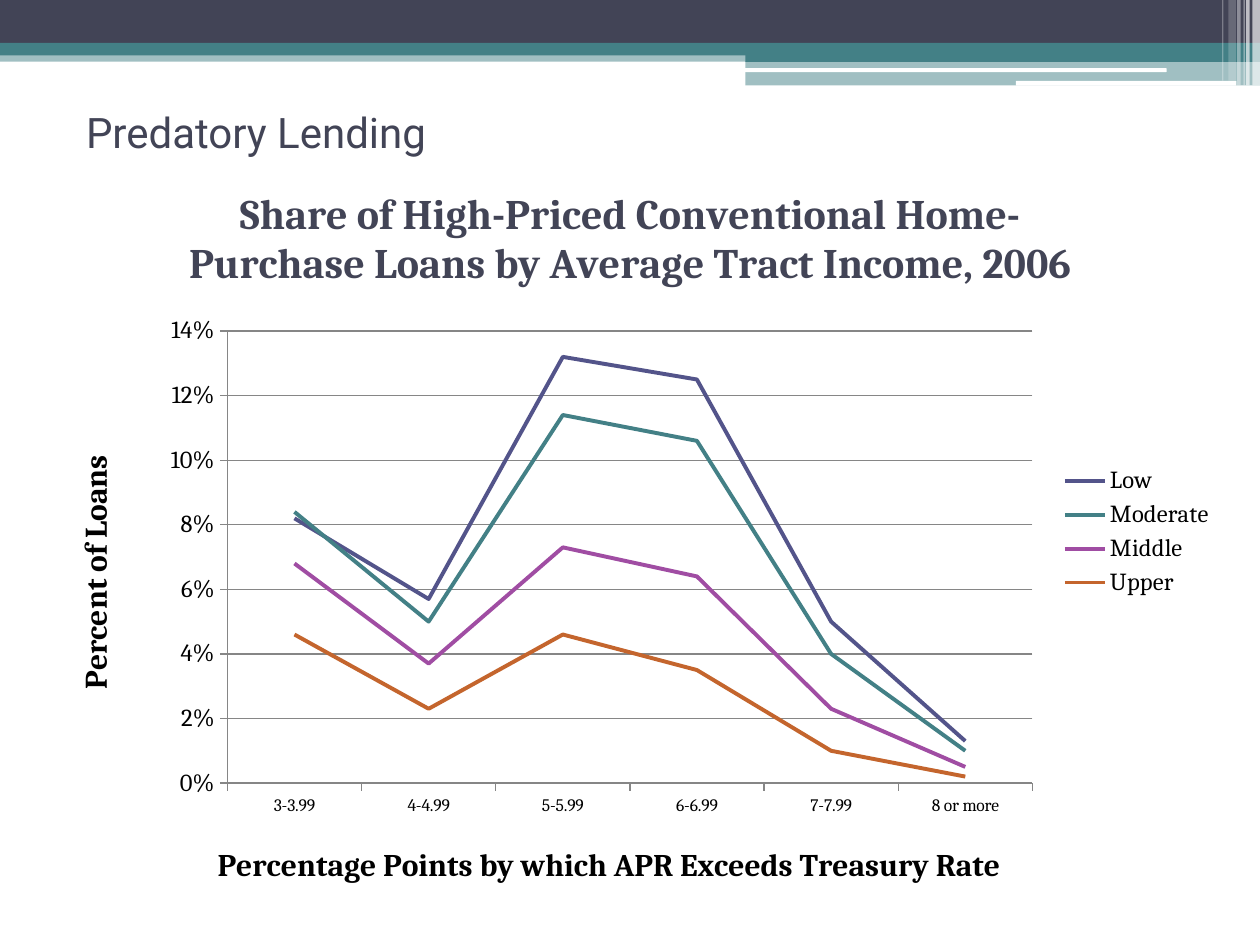
"""Build the Predatory Lending slide with its native line chart."""
from lxml.etree import SubElement
from pptx import Presentation
from pptx.chart.data import CategoryChartData
from pptx.dml.color import RGBColor
from pptx.enum.chart import XL_CHART_TYPE as ChartType, XL_LEGEND_POSITION as LegendPosition
from pptx.enum.chart import XL_MARKER_STYLE as Marker, XL_TICK_MARK as Tick
from pptx.enum.shapes import MSO_SHAPE as Preset
from pptx.enum.text import MSO_ANCHOR as Anchor, PP_ALIGN as Align
from pptx.oxml import parse_xml
from pptx.oxml.ns import nsdecls, qn
from pptx.util import Pt

NAVY = RGBColor(0x42, 0x44, 0x56)
TEAL = RGBColor(0x43, 0x80, 0x86)
INDIGO = RGBColor(0x53, 0x54, 0x8A)
PURPLE = RGBColor(0xA0, 0x4D, 0xA3)
ORANGE = RGBColor(0xC4, 0x65, 0x2D)
GRAY = RGBColor(0x86, 0x86, 0x86)
WHITE = RGBColor(0xFF, 0xFF, 0xFF)
BLACK = RGBColor(0, 0, 0)

BANDS = [
    (0, 28.8, 720, 6.5, TEAL, 50),
    (0, 0, 720, 24.5, NAVY, 100),
    (0, 24.5, 720, 7.2, TEAL, 100),
    (426, 28, 294, 7.4, TEAL, 100),
    (426, 35, 294, 13.8, TEAL, 50),
]
HIGHLIGHTS = [(425.5, 39, 241.2, 2.2), (580.5, 46.2, 126, 2.7)]
STRIPES = [
    (715.7, 4.3, 48.8, 65), (712.1, 2, 48.8, 65), (710.6, 0.7, 48.8, 60),
    (707, 2, 48.8, 40), (702, 4.3, 46.1, 20), (698.4, 0.7, 46.1, 30),
]
RATES = ["3-3.99", "4-4.99", "5-5.99", "6-6.99", "7-7.99", "8 or more"]
INCOMES = [
    ("Low", INDIGO, (0.082, 0.057, 0.132, 0.125, 0.05, 0.013)),
    ("Moderate", TEAL, (0.084, 0.05, 0.114, 0.106, 0.04, 0.01)),
    ("Middle", PURPLE, (0.068, 0.037, 0.073, 0.064, 0.023, 0.005)),
    ("Upper", ORANGE, (0.046, 0.023, 0.046, 0.035, 0.01, 0.002)),
]


class LendingSlide:
    """Hold the fonts and the page, and add each kind of element."""

    heading_font = "Roboto"
    chart_font = "Cambria"

    def __init__(self, deck):
        self.page = deck.slides.add_slide(deck.slide_layouts[5])

    def style(self, font, size, color, name=None, bold=False):
        font.name = name or self.chart_font
        font.size = Pt(size)
        font.color.rgb = color
        font.bold = bold

    def bar(self, left, top, width, height, color, opacity=100, preset=Preset.RECTANGLE):
        box = self.page.shapes.add_shape(preset, Pt(left), Pt(top), Pt(width), Pt(height))
        box.shadow.inherit = False
        box.line.fill.background()
        box.fill.solid()
        box.fill.fore_color.rgb = color
        if opacity < 100:
            fill = box.fill._xPr.find(qn("a:solidFill"))
            SubElement(fill[0], qn("a:alpha"), val=str(opacity * 1000))

    def title(self, text, left, top, width, height):
        box = self.page.shapes.title
        box.left, box.top, box.width, box.height = map(Pt, (left, top, width, height))
        box.text_frame.text = text
        box.text_frame.vertical_anchor = Anchor.MIDDLE
        para = box.text_frame.paragraphs[0]
        para.alignment = Align.LEFT
        self.style(para.font, 24, NAVY, self.heading_font)

    def place(self, element, index, target=None, **fractions):
        old = element.find(qn("c:layout"))
        if old is not None:
            element.remove(old)
        layout = parse_xml(f"<c:layout {nsdecls('c')}><c:manualLayout/></c:layout>")
        if target:
            SubElement(layout[0], qn("c:layoutTarget"), val=target)
        for side in "xy":
            SubElement(layout[0], qn(f"c:{side}Mode"), val="edge")
        for side, fraction in fractions.items():
            SubElement(layout[0], qn(f"c:{side}"), val=str(fraction))
        element.insert(index, layout)

    def chart_title(self, owner, text, size, color):
        frame = owner.text_frame
        frame.text = text
        self.style(frame.paragraphs[0].font, size, color, bold=True)

    def axis(self, axis, text, size, x, y):
        self.style(axis.tick_labels.font, size, BLACK)
        axis.major_tick_mark = Tick.OUTSIDE
        axis.minor_tick_mark = Tick.NONE
        axis.format.line.color.rgb = GRAY
        axis.format.line.width = Pt(0.75)
        self.chart_title(axis.axis_title, text, 18, BLACK)
        self.place(axis.axis_title._element, 1, x=x, y=y)

    def line_chart(self, left, top, width, height):
        data = CategoryChartData(number_format="0%")
        data.categories = RATES
        for name, _, shares in INCOMES:
            data.add_series(name, shares)
        chart = self.page.shapes.add_chart(
            ChartType.LINE, Pt(left), Pt(top), Pt(width), Pt(height), data).chart
        self.style(chart.font, 10, BLACK)
        self.chart_title(
            chart.chart_title,
            "Share of High-Priced Conventional Home-Purchase Loans "
            "by Average Tract Income, 2006", 24, NAVY)
        chart.has_legend = True
        chart.legend.position = LegendPosition.RIGHT
        chart.legend.include_in_layout = False
        self.style(chart.legend.font, 14, BLACK)

        self.axis(chart.category_axis,
                  "Percentage Points by which APR Exceeds Treasury Rate", 10, 0.15, 0.91)
        shares = chart.value_axis
        self.axis(shares, "Percent of Loans", 14, 0.03, 0.39)
        shares.minimum_scale, shares.maximum_scale, shares.major_unit = 0, 0.14, 0.02
        shares.tick_labels.number_format = "0%"
        shares.tick_labels.number_format_is_linked = False
        shares.major_gridlines.format.line.color.rgb = GRAY
        shares.major_gridlines.format.line.width = Pt(0.75)

        plot = chart.plots[0]
        plot.vary_by_categories = False
        for series, (_, color, _) in zip(plot.series, INCOMES):
            series.smooth = False
            series.marker.style = Marker.NONE
            series.format.line.color.rgb = color
            series.format.line.width = Pt(2.25)
        area = chart._chartSpace.chart.plotArea
        self.place(area, 0, "inner", x=0.163, y=0.232, w=0.674, h=0.604)


def main():
    deck = Presentation()
    deck.slide_width, deck.slide_height = Pt(720), Pt(540)
    slide = LendingSlide(deck)
    for band in BANDS:
        slide.bar(*band)
    for highlight in HIGHLIGHTS:
        slide.bar(*highlight, WHITE, preset=Preset.ROUNDED_RECTANGLE)
    for left, width, height, opacity in STRIPES:
        slide.bar(left, 0, width, height, WHITE, opacity)
    slide.title(" Predatory Lending", 36, 54, 648, 42)
    slide.line_chart(18.7, 90, 682.6, 427.7)
    deck.save("out.pptx")


if __name__ == "__main__":
    main()
